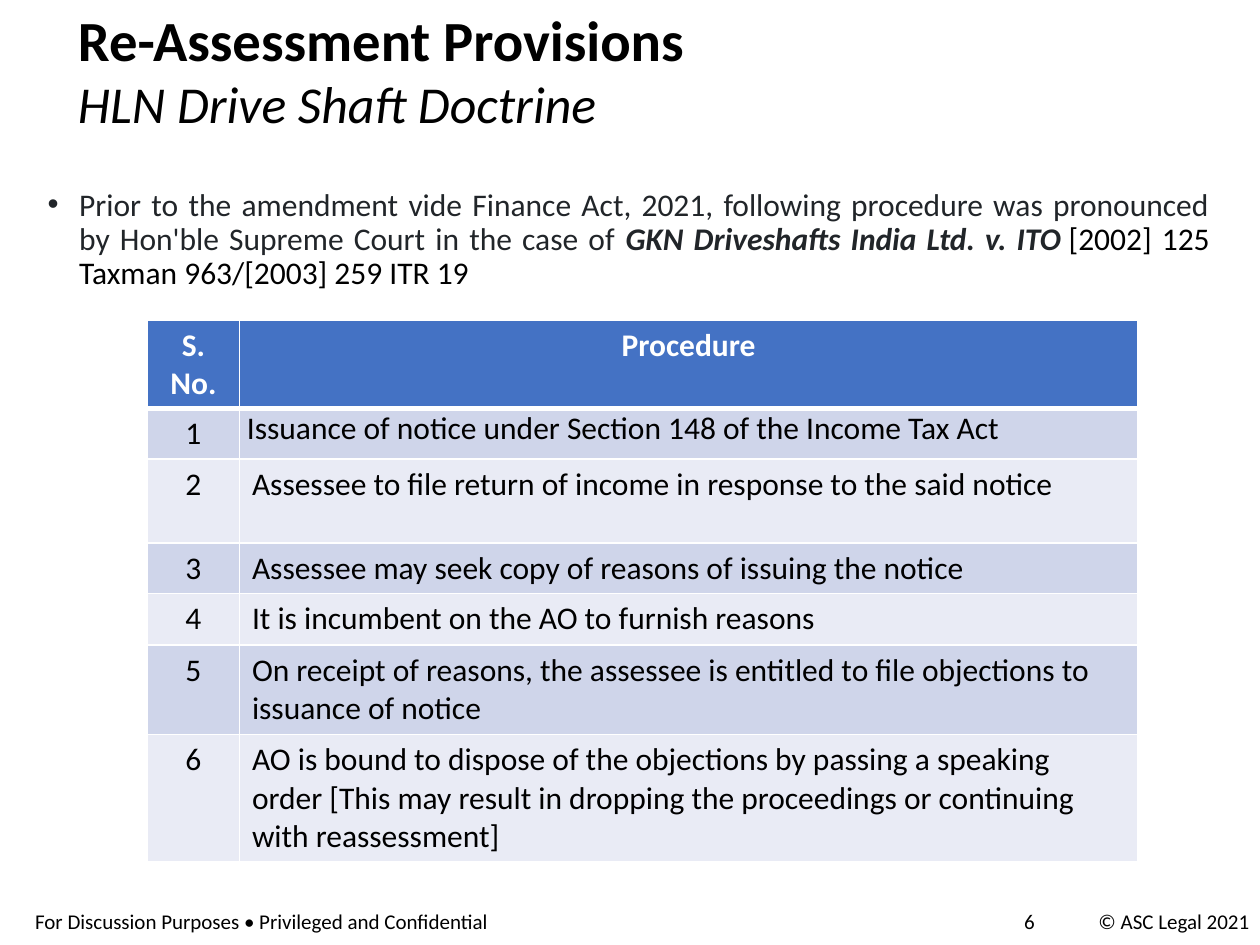
from lxml import etree
from pptx import Presentation
from pptx import util as u
from pptx.dml import color
from pptx.enum import text
from pptx.oxml import ns

ALIGN = text.PP_ALIGN
STEPS = [
    "Issuance of notice under Section 148 of the Income Tax Act",
    "Assessee to file return of income in response to the said notice",
    "Assessee may seek copy of reasons of issuing the notice",
    "It is incumbent on the AO to furnish reasons",
    "On receipt of reasons, the assessee is entitled to file objections to issuance of notice",
    "AO is bound to dispose of the objections by passing a speaking order "
    "[This may result in dropping the proceedings or continuing with\u00a0reassessment]",
]


def style(font, size, hue="000000", bold=False, italic=False):
    """Set the face, size, colour and weight of a font."""
    font.name, font.size = "Calibri", u.Pt(size)
    font.bold, font.italic = bold, italic
    font.color.rgb = color.RGBColor.from_string(hue)


def add_box(slide, box, wrap=True):
    """Add a text box and return its frame."""
    frame = slide.shapes.add_textbox(*map(u.Inches, box)).text_frame
    frame.word_wrap = wrap
    return frame


def add_title(slide, box):
    """Place the heading and its italic second line."""
    frame = add_box(slide, box)
    frame.text = "Re-Assessment Provisions\nHLN Drive Shaft Doctrine"
    head, sub = frame.paragraphs
    head.line_spacing = sub.line_spacing = 0.7
    sub.space_before = u.Pt(10)
    style(head.runs[0].font, 32.4, bold=True)
    style(sub.runs[0].font, 29.6, italic=True)


def add_intro(slide, box):
    """Place the bulleted paragraph that cites the case."""
    para = add_box(slide, box).paragraphs[0]
    para.alignment, para.line_spacing = ALIGN.JUSTIFY, 0.9
    props = para._p.get_or_add_pPr()
    props.set("marL", str(u.Inches(0.25)))
    props.set("indent", str(u.Inches(-0.25)))
    etree.SubElement(props, ns.qn("a:buFont"), typeface="Arial")
    etree.SubElement(props, ns.qn("a:buChar"), char="•")
    parts = [
        ("Prior to the amendment vide Finance Act, 2021, following procedure was "
         "pronounced by Hon'ble Supreme Court in the case of ", "212529", False),
        ("GKN Driveshafts India Ltd. v. ITO\u00a0", "212529", True),
        ("[2002] 125 Taxman 963/[2003] 259 ITR 19", "000000", False),
    ]
    for words, hue, strong in parts:
        run = para.add_run()
        run.text = words
        style(run.font, 18, hue, strong, strong)


def set_edges(cell, widths):
    """Draw white cell borders of the given widths in points."""
    props = cell._tc.get_or_add_tcPr()
    for spot, (side, width) in enumerate(widths.items()):
        line = etree.Element(ns.qn("a:ln" + side), w=str(u.Pt(width)))
        fill = etree.SubElement(line, ns.qn("a:solidFill"))
        etree.SubElement(fill, ns.qn("a:srgbClr"), val="FFFFFF")
        props.insert(spot, line)


def fill_cell(cell, words, row, align):
    """Write one cell with its banded fill and borders."""
    head = row == 0
    hue = "4472C4" if head else ("E9EBF5", "CFD5EA")[row % 2]
    cell.fill.solid()
    cell.fill.fore_color.rgb = color.RGBColor.from_string(hue)
    set_edges(cell, {"L": 1, "R": 1, "T": 3 if row == 1 else 1, "B": 3 if head else 1})
    cell.text = words
    para = cell.text_frame.paragraphs[0]
    para.alignment = align
    style(para.runs[0].font, 18, "FFFFFF" if head else "000000", head)


def add_steps(slide, box):
    """Place the table of numbered procedure steps."""
    rows = [("S. No.", "Procedure")] + [(str(n), s) for n, s in enumerate(STEPS, 1)]
    grid = slide.shapes.add_table(len(rows), 2, *map(u.Inches, box)).table
    for col, width in zip(grid.columns, (0.73, box[2] - 0.73)):
        col.width = u.Inches(width)
    for row, tall in zip(grid.rows, (0.7, 0.4, 0.67, 0.4, 0.41, 0.71, 1.01)):
        row.height = u.Inches(tall)
    for r, (num, step) in enumerate(rows):
        fill_cell(grid.cell(r, 0), num, r, ALIGN.CENTER)
        fill_cell(grid.cell(r, 1), step, r, ALIGN.LEFT if r else ALIGN.CENTER)
    first = grid.cell(1, 1)
    first.margin_left = u.Inches(0.06)
    first.margin_top = first.margin_right = first.margin_bottom = u.Inches(0.01)
    para = first.text_frame.paragraphs[0]
    para.alignment, para.space_after = ALIGN.JUSTIFY, u.Pt(8)


def add_foot(slide, top):
    """Place the notice, page number and copyright line."""
    for words, left, width, wrap in (
        ("For Discussion Purposes • Privileged and Confidential", 0.18, 3.92, True),
        ("6", 8.03, 0.4, False),
        ("© ASC Legal 2021", 8.62, 1.47, True),
    ):
        frame = add_box(slide, (left, top, width, 0.3), wrap)
        frame.text = words
        style(frame.paragraphs[0].runs[0].font, 12)


def main():
    """Build the slide and save it."""
    deck = Presentation()
    deck.slide_width, deck.slide_height = u.Inches(10), u.Inches(7.5)
    slide = deck.slides.add_slide(deck.slide_layouts[6])
    add_foot(slide, 7.16)
    add_intro(slide, (0.28, 1.45, 9.42, 5.64))
    add_title(slide, (0.52, 0.14, 7.42, 1))
    add_steps(slide, (1.17, 2.54, 7.86, 4.3))
    deck.save("out.pptx")


if __name__ == "__main__":
    main()
